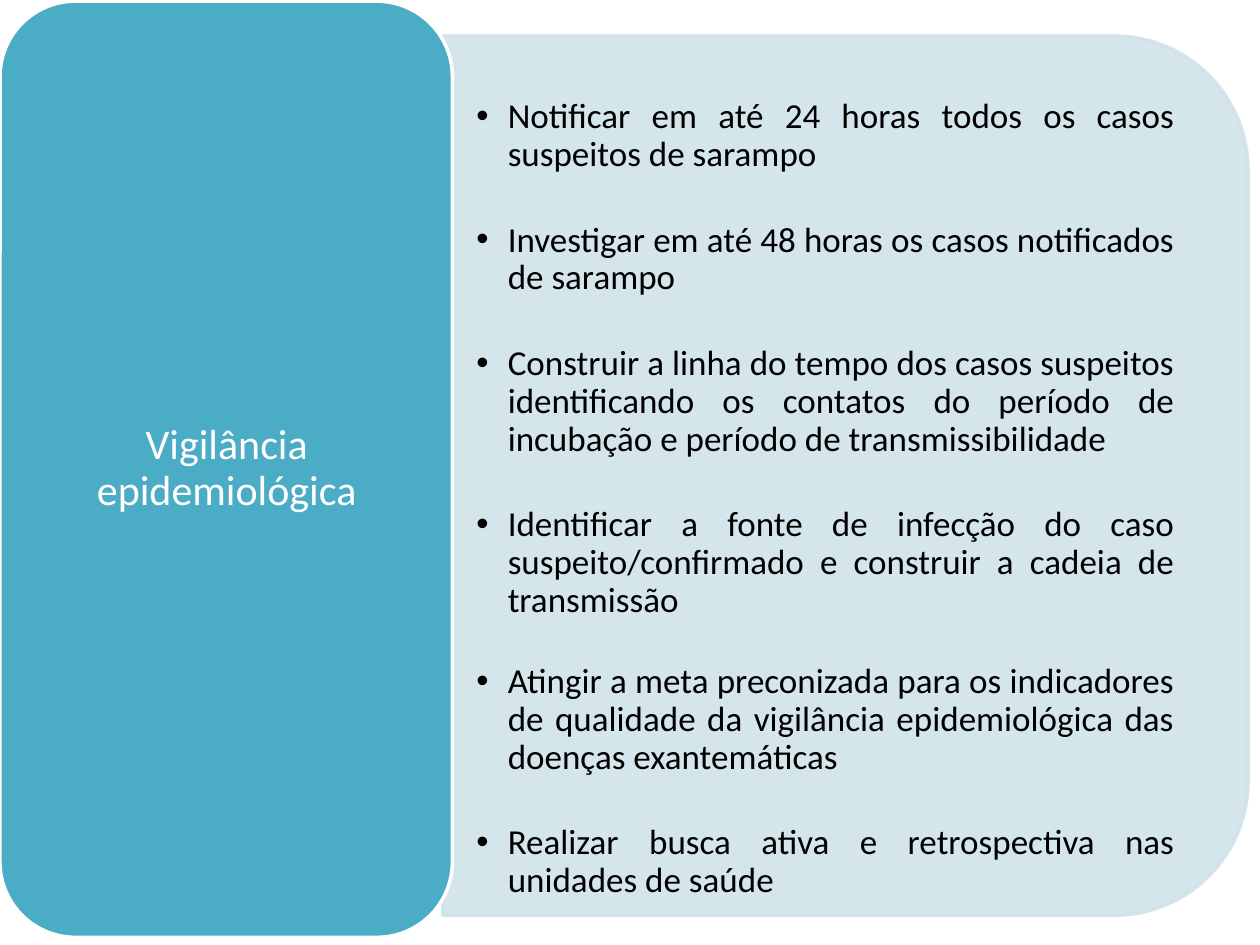
"""Builds the slide on epidemiological surveillance of measles."""
from lxml import etree
from pptx import Presentation
from pptx.dml.color import RGBColor
from pptx.enum import shapes, text
from pptx.oxml import ns
from pptx.util import Inches, Pt

HEADING = "Vigilância epidemiológica"
ACTIONS = [
    ("Notificar em até 24 horas todos os casos suspeitos de sarampo", 27.4),
    ("Investigar em até 48 horas os casos notificados de sarampo", 27.4),
    ("Construir a linha do tempo dos casos suspeitos identificando os contatos "
     "do período de incubação e período de transmissibilidade", 27.4),
    ("Identificar a fonte de infecção do caso suspeito/confirmado e construir "
     "a cadeia de transmissão", 24.6),
    ("Atingir a meta preconizada para os indicadores de qualidade da vigilância "
     "epidemiológica das doenças exantemáticas", 27.4),
    ("Realizar busca ativa e retrospectiva nas unidades de saúde", 0),
]
THEME = {
    "font": "Calibri", "heading_size": 24, "action_size": 20,
    "accent": "4BACC6", "panel": "D0E3EA", "light": "FFFFFF", "dark": "000000",
    "opacity": 90, "outline": 2, "indent": 0.25, "spacing": 0.9,
}
PLACES = {
    "panel": (3.22, 0.58, 6.98, 6.39),
    "actions": (3.51, 0.6, 6.08, 6.36),
    "banner": (0, 0.01, 3.59, 7.43),
    "heading": (0.18, 0.18, 3.24, 7.08),
}
HEADING_FRAME = {"vertical_anchor": text.MSO_ANCHOR.MIDDLE}
ACTIONS_FRAME = {
    "vertical_anchor": text.MSO_ANCHOR.TOP,
    "margin_left": Inches(0.27), "margin_right": Inches(0.27),
    "margin_top": Inches(0.18), "margin_bottom": Inches(0.14),
}


def apply(target, formats):
    for key, value in formats.items():
        setattr(target, key, value)


def place(name):
    return [Inches(length) for length in PLACES[name]]


def add_block(slide, kind, name, fill, outline, rotation=0):
    block = slide.shapes.add_shape(kind, *place(name))
    block.shadow.inherit = False
    block.rotation = rotation
    block.fill.solid()
    block.line.fill.solid()
    block.line.width = Pt(THEME["outline"])
    for paint, color in ((block.fill, fill), (block.line.fill, outline)):
        paint.fore_color.rgb = RGBColor.from_string(THEME[color])
    return block


def make_translucent(block):
    for color in block.element.spPr.iter(ns.qn("a:srgbClr")):
        alpha = etree.SubElement(color, ns.qn("a:alpha"))
        alpha.set("val", str(THEME["opacity"] * 1000))


def add_frame(slide, name, formats):
    frame = slide.shapes.add_textbox(*place(name)).text_frame
    apply(frame, {"word_wrap": True, **formats})
    return frame


def add_bullet(paragraph):
    indent = Inches(THEME["indent"])
    properties = paragraph._p.get_or_add_pPr()
    apply_xml = {"marL": indent, "indent": -indent}
    for key, value in apply_xml.items():
        properties.set(key, str(value))
    etree.SubElement(properties, ns.qn("a:buFont")).set("typeface", "Arial")
    etree.SubElement(properties, ns.qn("a:buChar")).set("char", "•")


def write(paragraph, words, size, color, align, after=0):
    apply(paragraph, {"alignment": align, "line_spacing": THEME["spacing"],
                      "space_after": Pt(after)})
    run = paragraph.add_run()
    run.text = words
    apply(run.font, {"name": THEME["font"], "size": Pt(THEME[size])})
    run.font.color.rgb = RGBColor.from_string(THEME[color])


def main():
    deck = Presentation()
    apply(deck, {"slide_width": Inches(10), "slide_height": Inches(7.5)})
    slide = deck.slides.add_slide(deck.slide_layouts[6])
    kinds = shapes.MSO_SHAPE

    panel = add_block(slide, kinds.ROUND_2_SAME_RECTANGLE, "panel", "panel", "panel", 90)
    make_translucent(panel)
    actions = add_frame(slide, "actions", ACTIONS_FRAME)
    for index, (action, after) in enumerate(ACTIONS):
        paragraph = actions.add_paragraph() if index else actions.paragraphs[0]
        add_bullet(paragraph)
        write(paragraph, action, "action_size", "dark", text.PP_ALIGN.JUSTIFY, after)

    add_block(slide, kinds.ROUNDED_RECTANGLE, "banner", "accent", "light")
    heading = add_frame(slide, "heading", HEADING_FRAME)
    write(heading.paragraphs[0], HEADING, "heading_size", "light", text.PP_ALIGN.CENTER)
    deck.save("out.pptx")


if __name__ == "__main__":
    main()
